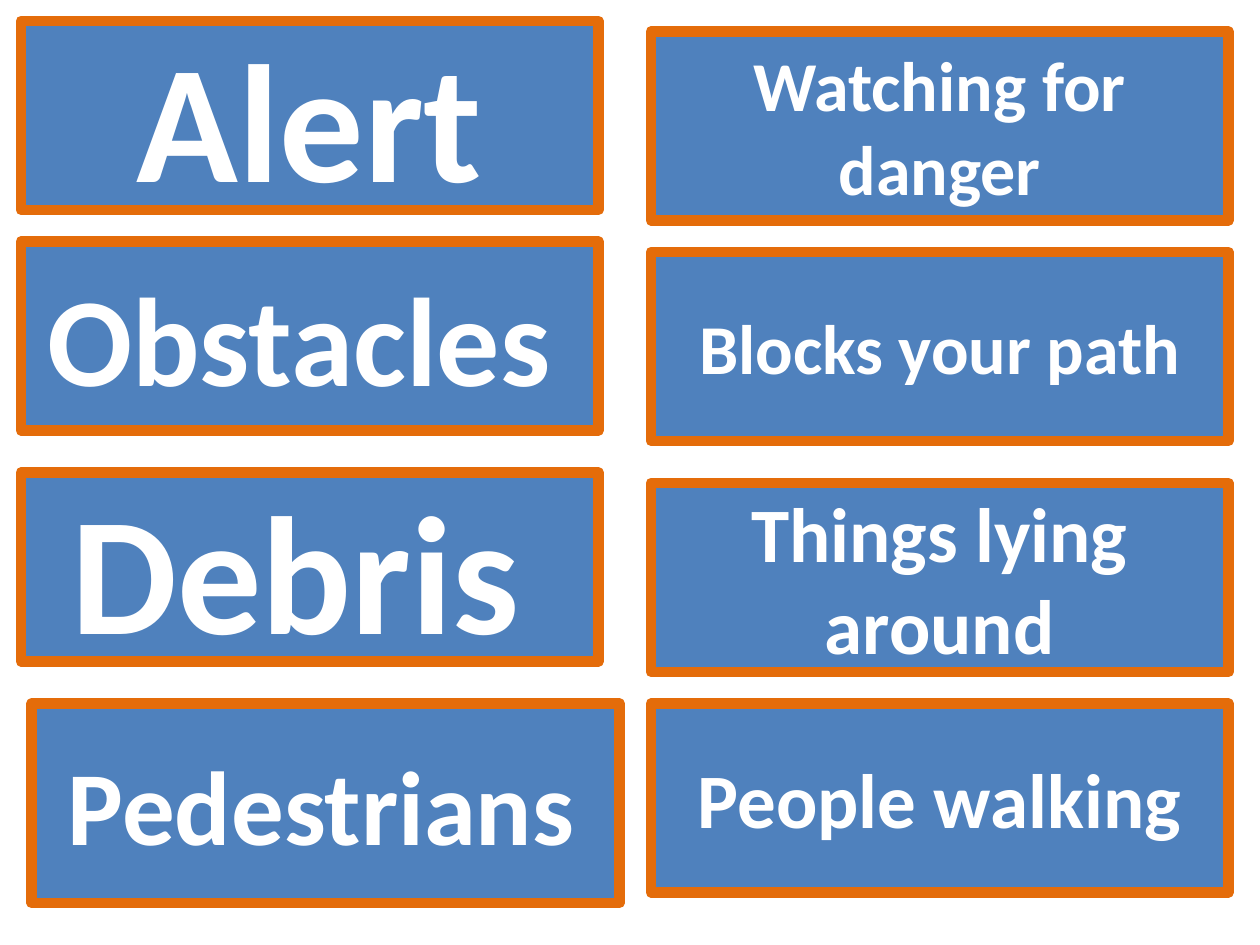
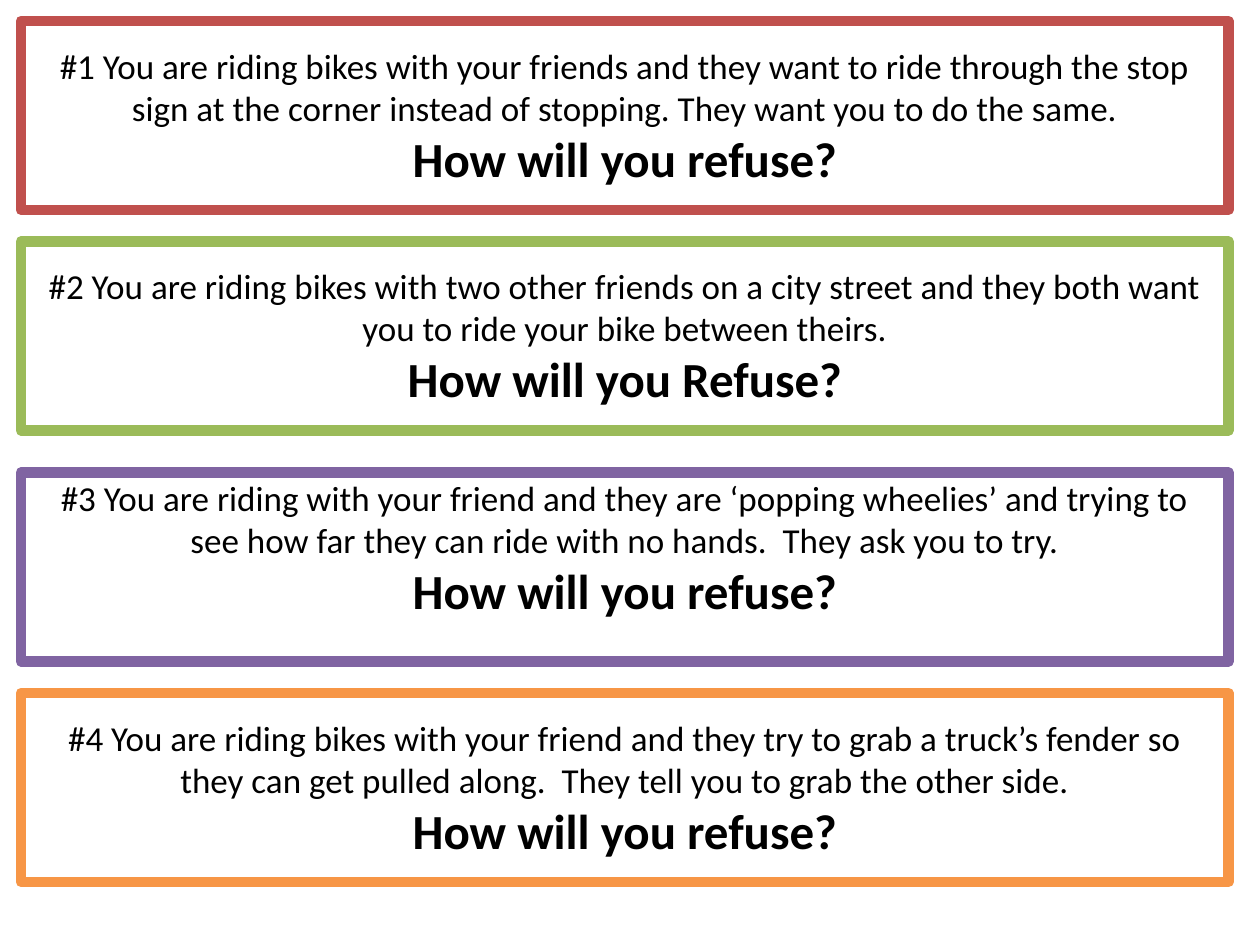
"""Build vocabulary matching cards and refusal scenario cards for bike safety."""
from dataclasses import dataclass

from pptx import Presentation
from pptx.dml.color import RGBColor
from pptx.enum.shapes import MSO_SHAPE
from pptx.enum.text import MSO_ANCHOR, PP_ALIGN
from pptx.util import Inches, Pt

RECT = MSO_SHAPE.RECTANGLE
MIDDLE = MSO_ANCHOR.MIDDLE
CENTER, LEFT = PP_ALIGN.CENTER, PP_ALIGN.LEFT

FONT = "Calibri"
BLUE, ORANGE = "4F81BD", "E46C0A"
WHITE, BLACK = "FFFFFF", "000000"
BORDER = 6
SLIDE_W, SLIDE_H = Inches(10), Inches(7.5)
COLS, ROWS = 120, 90
LEFT_COL, RIGHT_COL = 2, 62
CARD_W, CARD_H, WIDE_W = 55, 18, 115
SIDE_PAD, END_PAD = 7.2, 3.6


@dataclass(frozen=True)
class Line:
    text: str
    size: int
    bold: bool = True


@dataclass(frozen=True)
class Card:
    col: int
    row: int
    lines: tuple[Line, ...]
    width: int = CARD_W
    height: int = CARD_H
    fill: str = BLUE
    border: str = ORANGE
    color: str = WHITE
    align: PP_ALIGN = CENTER
    indent: float = 0
    space_below: float = 0


def term(row: int, text: str, size: int, **style) -> Card:
    """Describe a vocabulary word in the left column."""
    return Card(**{"col": LEFT_COL, "row": row, "lines": (Line(text, size),), **style})


def meaning(row: int, text: str, size: int) -> Card:
    """Describe a definition in the right column."""
    return Card(RIGHT_COL, row, (Line(text, size),))


def scenario(row: int, border: str, story: str,
             question: str = "How will you refuse?", space_below: float = 0) -> Card:
    """Describe a full-width scenario with its closing question."""
    return Card(LEFT_COL, row, (Line(story, 20, False), Line(question, 28)), WIDE_W,
                fill=WHITE, border=border, color=BLACK, space_below=space_below)


VOCABULARY = (
    term(2, "Alert", 96),
    term(23, "Obstacles", 72, align=LEFT, indent=8.1),
    term(45, "Debris", 96, align=LEFT, indent=21.7),
    term(67, "Pedestrians", 60, align=LEFT, indent=13.6, col=3, width=56, height=19),
    meaning(3, "Watching for danger", 40),
    meaning(24, "Blocks your path", 40),
    meaning(46, "Things lying around", 44),
    meaning(67, "People walking", 44),
)

SCENARIOS = (
    scenario(2, "C0504D",
             "#1 You are riding bikes with your friends and they want to ride through "
             "the stop sign at the corner instead of stopping. They want you to do the same."),
    scenario(23, "9BBB59",
             "#2 You are riding bikes with two other friends on a city street and they "
             "both want you to ride your bike between theirs.", "How will you Refuse?"),
    scenario(45, "8064A2",
             "#3 You are riding with your friend and they are ‘popping wheelies’ and trying "
             "to see how far they can ride with no hands.  They ask you to try.",
             space_below=22),
    scenario(66, "F79646",
             "#4 You are riding bikes with your friend and they try to grab a truck’s fender "
             "so they can get pulled along.  They tell you to grab the other side."),
)


def rgb(value: str) -> RGBColor:
    """Turn a hex string into a colour."""
    return RGBColor.from_string(value)


def x(cols: int) -> int:
    """Convert grid columns to a length."""
    return round(SLIDE_W * cols / COLS)


def y(rows: int) -> int:
    """Convert grid rows to a length."""
    return round(SLIDE_H * rows / ROWS)


def draw_card(s, card: Card) -> None:
    """Draw one bordered card with its text."""
    sp = s.shapes.add_shape(RECT, x(card.col), y(card.row), x(card.width), y(card.height))
    sp.shadow.inherit = False
    sp.fill.solid()
    sp.fill.fore_color.rgb = rgb(card.fill)
    sp.line.color.rgb = rgb(card.border)
    sp.line.width = Pt(BORDER)
    tf = sp.text_frame
    tf.word_wrap = True
    tf.vertical_anchor = MIDDLE
    tf.margin_left = Pt(SIDE_PAD + card.indent)
    tf.margin_bottom = Pt(END_PAD + card.space_below)
    tf.text = "\n".join(line.text for line in card.lines)
    for p, line in zip(tf.paragraphs, card.lines):
        p.alignment = card.align
        font = p.runs[0].font
        font.name, font.size, font.bold = FONT, Pt(line.size), line.bold
        font.color.rgb = rgb(card.color)


def main() -> None:
    """Build and save both slides."""
    prs = Presentation()
    prs.slide_width, prs.slide_height = SLIDE_W, SLIDE_H
    blank = prs.slide_layouts.get_by_name("Blank")
    for cards in (VOCABULARY, SCENARIOS):
        s = prs.slides.add_slide(blank)
        for card in cards:
            draw_card(s, card)
    prs.save("out.pptx")


if __name__ == "__main__":
    main()
